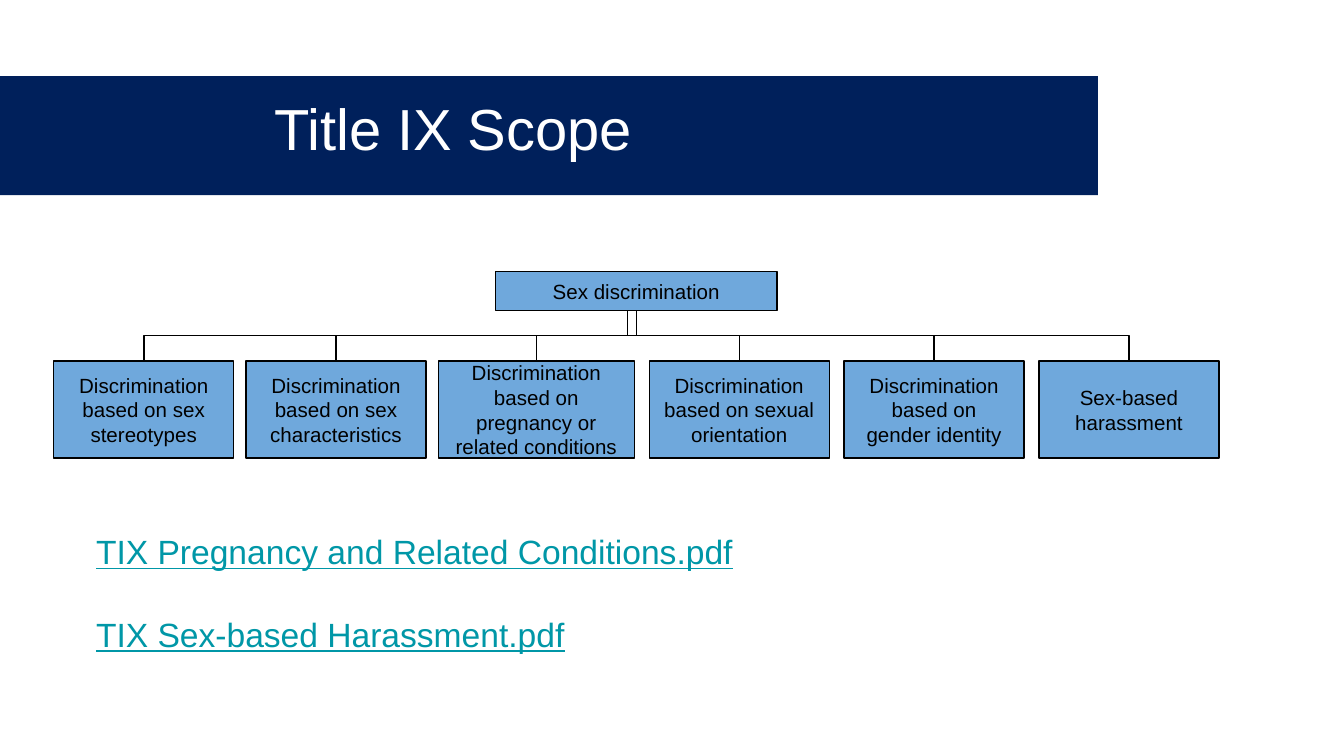
"""Build the Title IX Scope slide with its discrimination chart and document names."""
from dataclasses import dataclass

from lxml.etree import SubElement
from pptx import Presentation
from pptx.dml.color import RGBColor as RGB
from pptx.enum.shapes import MSO_CONNECTOR as CXN, MSO_SHAPE as SHAPE
from pptx.enum.text import MSO_ANCHOR as ANCHOR, PP_ALIGN as ALIGN
from pptx.oxml.ns import qn
from pptx.util import Pt


@dataclass(frozen=True)
class Theme:
    font: str = "Arial"
    navy: RGB = RGB(0x00, 0x20, 0x5B)
    blue: RGB = RGB(0x6F, 0xA8, 0xDC)
    teal: RGB = RGB(0x00, 0x97, 0xA7)
    black: RGB = RGB(0, 0, 0)
    white: RGB = RGB(255, 255, 255)
    title: float = 31
    link: float = 18
    label: float = 11
    line: float = 0.75


@dataclass(frozen=True)
class Box:
    text: str
    left: float
    top: float
    width: float
    height: float

    @property
    def center(self) -> float:
        return self.left + self.width / 2

    @property
    def bottom(self) -> float:
        return self.top + self.height


@dataclass(frozen=True)
class Branch:
    text: str
    gap: float = 7.9
    width: float = 96.5


THEME = Theme()
ROOT = Box("Sex discrimination", 265.5, 145.6, 150.8, 20.7)
BUS_Y, ROW_TOP, ROW_LEFT, ROW_HEIGHT = 180, 193.5, 28.8, 52
STUB_X = 336.1
BRANCHES = (
    Branch("Discrimination based on sex stereotypes", gap=0),
    Branch("Discrimination based on sex characteristics", gap=6.5),
    Branch("Discrimination based on pregnancy or related conditions", gap=6.5, width=105.1),
    Branch("Discrimination based on sexual orientation"),
    Branch("Discrimination based on gender identity"),
    Branch("Sex-based harassment"),
)
LINKS = ("TIX Pregnancy and Related Conditions.pdf", "TIX Sex-based Harassment.pdf")


def style(p, size: float, color: RGB, underline: bool = False) -> None:
    for r in p.runs:
        f = r.font
        f.name, f.size, f.color.rgb = THEME.font, Pt(size), color
        if underline:
            f.underline = True


def set_frame(tf, side: float, edge: float, anchor) -> None:
    tf.word_wrap = True
    tf.margin_left = tf.margin_right = Pt(side)
    tf.margin_top = tf.margin_bottom = Pt(edge)
    tf.vertical_anchor = anchor


def add_rect(s, box: Box, fill: RGB):
    sp = s.shapes.add_shape(SHAPE.RECTANGLE, Pt(box.left), Pt(box.top), Pt(box.width), Pt(box.height))
    sp.shadow.inherit = False
    sp.fill.solid()
    sp.fill.fore_color.rgb = fill
    sp.line.fill.background()
    return sp


def add_node(s, box: Box):
    sp = add_rect(s, box, THEME.blue)
    sp.line.color.rgb, sp.line.width = THEME.black, Pt(THEME.line)
    tf = sp.text_frame
    set_frame(tf, 7.2, 7.2, ANCHOR.MIDDLE)
    tf.text = box.text
    p = tf.paragraphs[0]
    p.alignment = ALIGN.CENTER
    style(p, THEME.label, THEME.black)
    return sp


def add_line(s, kind, x1: float, y1: float, x2: float, y2: float):
    c = s.shapes.add_connector(kind, Pt(x1), Pt(y1), Pt(x2), Pt(y2))
    c.line.color.rgb, c.line.width = THEME.black, Pt(THEME.line)
    SubElement(c._element.spPr, qn("a:effectLst"))
    return c


def add_elbow(s, root, node, start: Box, end: Box) -> None:
    """Join two boxes with an elbow turned to leave downwards."""
    c = add_line(s, CXN.ELBOW, start.center, start.bottom, end.center, end.top)
    c.begin_connect(root, 2)
    c.end_connect(node, 0)
    drop, span = end.top - start.bottom, abs(end.center - start.center)
    mid_x, mid_y = (start.center + end.center) / 2, (start.bottom + end.top) / 2
    c.left, c.top = Pt(mid_x - drop / 2), Pt(mid_y - span / 2)
    c.width, c.height = Pt(drop), Pt(span)
    xfrm = c._element.spPr.find(qn("a:xfrm"))
    for name in ("flipH", "flipV"):
        xfrm.attrib.pop(name, None)
    if end.center < start.center:
        xfrm.set("rot", "5400000")
    else:
        xfrm.set("rot", "16200000")
        xfrm.set("flipH", "1")


def add_title(s) -> None:
    add_rect(s, Box("", 0, 40.8, 588.2, 63.8), THEME.navy)
    tf = s.shapes.add_textbox(Pt(142), Pt(27.4), Pt(446.4), Pt(86.4)).text_frame
    set_frame(tf, 5, 2.9, ANCHOR.MIDDLE)
    tf.text = "Title IX Scope"
    p = tf.paragraphs[0]
    p.line_spacing = 0.9
    style(p, THEME.title, THEME.white)


def add_chart_tree(s) -> None:
    root = add_node(s, ROOT)
    boxes, nodes, left = [], [], ROW_LEFT
    for b in BRANCHES:
        left += b.gap
        boxes.append(Box(b.text, left, ROW_TOP, b.width, ROW_HEIGHT))
        nodes.append(add_node(s, boxes[-1]))
        left += b.width
    for i in (0, -1):
        add_elbow(s, root, nodes[i], ROOT, boxes[i])
    for box, node in zip(boxes[1:-1], nodes[1:-1]):
        c = add_line(s, CXN.STRAIGHT, box.center, box.top, box.center, BUS_Y)
        c.begin_connect(node, 0)
    add_line(s, CXN.STRAIGHT, STUB_X, BUS_Y, STUB_X, ROOT.bottom)


def add_links(s) -> None:
    tf = s.shapes.add_textbox(Pt(44.4), Pt(277.4), Pt(504), Pt(115.2)).text_frame
    set_frame(tf, 7.2, 7.2, ANCHOR.TOP)
    for i, text in enumerate(LINKS):
        p = tf.add_paragraph() if i else tf.paragraphs[0]
        p.text = text
        if i:
            p.space_before = Pt(22.5)
        style(p, THEME.link, THEME.teal, underline=True)


def main() -> None:
    prs = Presentation()
    prs.slide_width, prs.slide_height = Pt(720), Pt(405)
    s = prs.slides.add_slide(prs.slide_layouts[6])
    add_title(s)
    add_chart_tree(s)
    add_links(s)
    prs.save("out.pptx")


if __name__ == "__main__":
    main()
